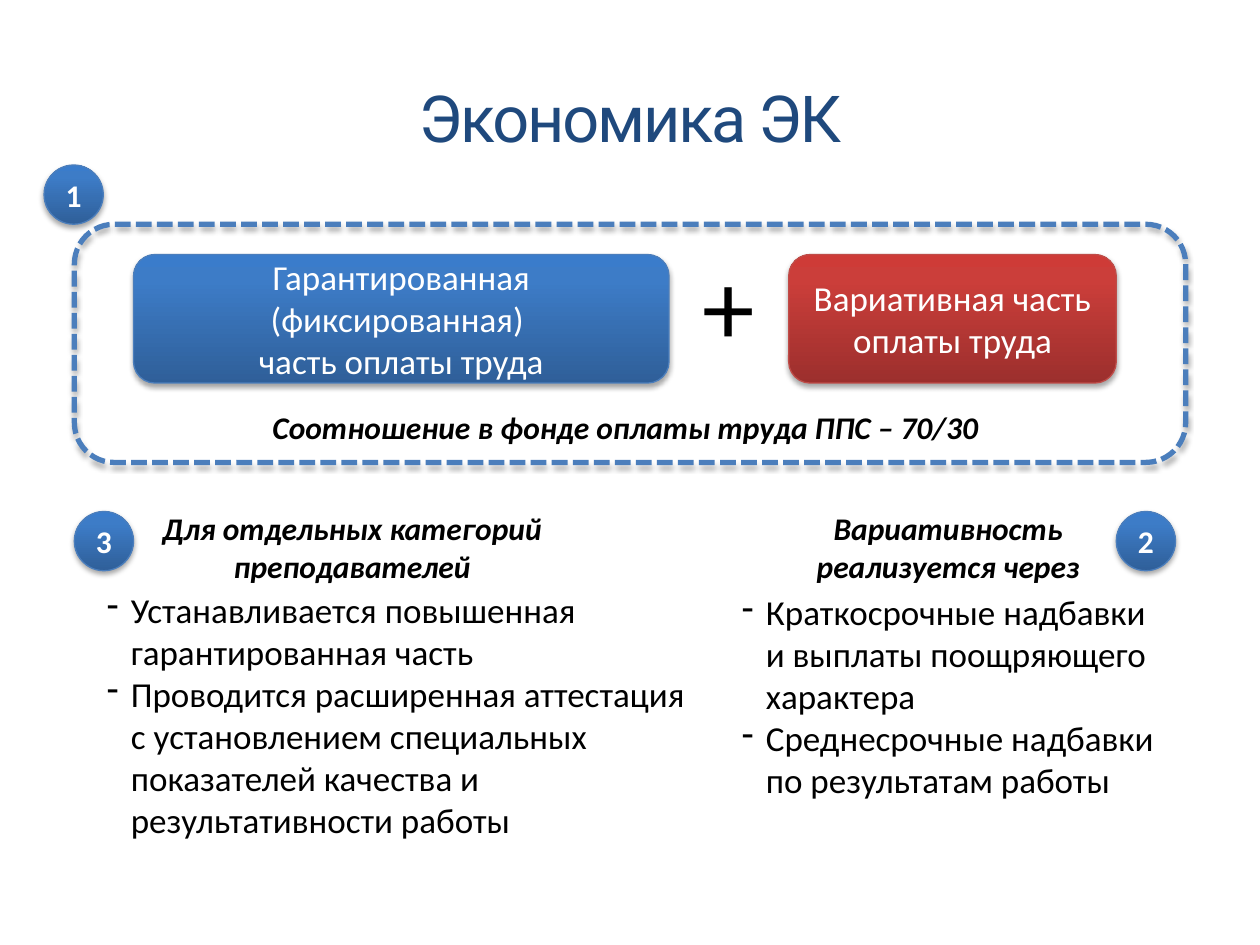
from lxml.etree import SubElement
from pptx import Presentation
from pptx.dml.color import RGBColor
from pptx.enum.dml import MSO_LINE
from pptx.enum.shapes import MSO_SHAPE
from pptx.enum.text import MSO_ANCHOR, PP_ALIGN
from pptx.oxml.ns import qn
from pptx.util import Inches, Pt

TITLE = "Экономика ЭК"
BLUE = {"line": "4B7EBC", "stops": [(0, "2F5F99"), (80, "3D7CC7"), (100, "3A7CCB")]}
RED = {"line": "BF4C48", "stops": [(0, "9C2F2D"), (80, "CB3E3A"), (100, "CE3B37")]}
FRAME = (0.59, 1.78, 8.82, 1.89)
BOX_TOP, BOX_HEIGHT, BADGE = 2.02, 1.02, 0.47

PAY_PARTS = [
    (1.06, 4.25, BLUE, ["Гарантированная (фиксированная) ", "часть оплаты труда"]),
    (6.26, 2.6, RED, ["Вариативная часть оплаты труда"]),
]
PLUS = ((5.39, 1.86, 0.79, 1.11), "+")
CAPTIONS = [
    ((2.01, 3.19, 5.91, 0.4), "Соотношение в фонде оплаты труда ППС – 70/30"),
    ((5.87, 3.99, 3.31, 0.71), "Вариативность реализуется через"),
    ((1.14, 3.99, 3.31, 0.71), "Для отдельных категорий преподавателей"),
]
LISTS = [
    ((5.79, 4.64, 3.54, 1.78), [
        "Краткосрочные надбавки и выплаты поощряющего характера",
        "Среднесрочные надбавки по результатам работы",
    ]),
    ((0.75, 4.62, 4.8, 2.12), [
        "Устанавливается повышенная гарантированная часть",
        "Проводится расширенная аттестация с установлением специальных "
        "показателей качества и результативности работы",
    ]),
]
BADGES = [("1", 0.35, 1.31), ("2", 8.86, 4.06), ("3", 0.59, 4.06)]


def color(value):
    return RGBColor.from_string(value)


def write(shape, lines, size, ink="000000", font="Calibri", bold=False,
          italic=False, align=PP_ALIGN.CENTER):
    tf = shape.text_frame
    tf.word_wrap = True
    tf.text = "\n".join(lines)
    for p in tf.paragraphs:
        p.alignment = align
        for r in p.runs:
            r.font.name, r.font.size = font, Pt(size)
            r.font.bold, r.font.italic = bold, italic
            r.font.color.rgb = color(ink)
    return tf


def add_text(s, at, lines, size, **style):
    return write(s.shapes.add_textbox(*map(Inches, at)), lines, size, **style)


def add_stop(parent, position, value):
    stop = SubElement(parent, qn("a:gs"), pos=str(position * 1000))
    SubElement(stop, qn("a:srgbClr"), val=value)


def add_panel(s, kind, at, theme, width=0.75, filled=True):
    sp = s.shapes.add_shape(kind, *map(Inches, at))
    if filled:
        sp.fill.gradient()
        sp.fill.gradient_angle = 90
        stops = sp._element.spPr.find(".//" + qn("a:gsLst"))
        for stop in list(stops):
            stops.remove(stop)
        for position, value in theme["stops"]:
            add_stop(stops, position, value)
    else:
        sp.fill.background()
    sp.line.color.rgb = color(theme["line"])
    sp.line.width = Pt(width)
    sp.shadow.inherit = False
    effects = sp._element.spPr.find(qn("a:effectLst"))
    shadow = SubElement(effects, qn("a:outerShdw"), blurRad=str(Pt(3.1)),
                        dist=str(Pt(1.8)), dir="5400000", rotWithShape="0")
    tint = SubElement(shadow, qn("a:srgbClr"), val="000000")
    SubElement(tint, qn("a:alpha"), val="35000")
    sp.text_frame.vertical_anchor = MSO_ANCHOR.MIDDLE
    return sp


def add_dash_list(s, at, items):
    tf = add_text(s, at, items, 20, align=PP_ALIGN.LEFT)
    indent = Inches(0.19)
    for p in tf.paragraphs:
        props = p._p.get_or_add_pPr()
        props.set("marL", str(indent))
        props.set("indent", str(-indent))
        SubElement(props, qn("a:buFontTx"))
        SubElement(props, qn("a:buChar"), char="-")


def add_title(s):
    title = s.shapes.title
    title.left, title.top, title.width, title.height = map(Inches, (0.5, 0.3, 9, 1.25))
    tf = write(title, [TITLE], 37, ink="1F497D", font="Roboto")
    tf.vertical_anchor = MSO_ANCHOR.MIDDLE
    tf.paragraphs[0].runs[0].font._element.set("spc", "-120")


def main():
    prs = Presentation()
    prs.slide_width, prs.slide_height = Inches(10), Inches(7.5)
    s = prs.slides.add_slide(prs.slide_layouts[5])
    add_title(s)
    for left, width, theme, lines in PAY_PARTS:
        sp = add_panel(s, MSO_SHAPE.ROUNDED_RECTANGLE,
                       (left, BOX_TOP, width, BOX_HEIGHT), theme)
        write(sp, lines, 20, ink="FFFFFF")
    add_text(s, PLUS[0], [PLUS[1]], 60)
    frame = add_panel(s, MSO_SHAPE.ROUNDED_RECTANGLE, FRAME, BLUE, width=3, filled=False)
    frame.line.dash_style = MSO_LINE.SQUARE_DOT
    for at, caption in CAPTIONS:
        add_text(s, at, [caption], 18, bold=True, italic=True)
    for at, items in LISTS:
        add_dash_list(s, at, items)
    for number, left, top in BADGES:
        sp = add_panel(s, MSO_SHAPE.OVAL, (left, top, BADGE, BADGE), BLUE)
        write(sp, [number], 18, ink="FFFFFF", bold=True)
    prs.save("out.pptx")


if __name__ == "__main__":
    main()
